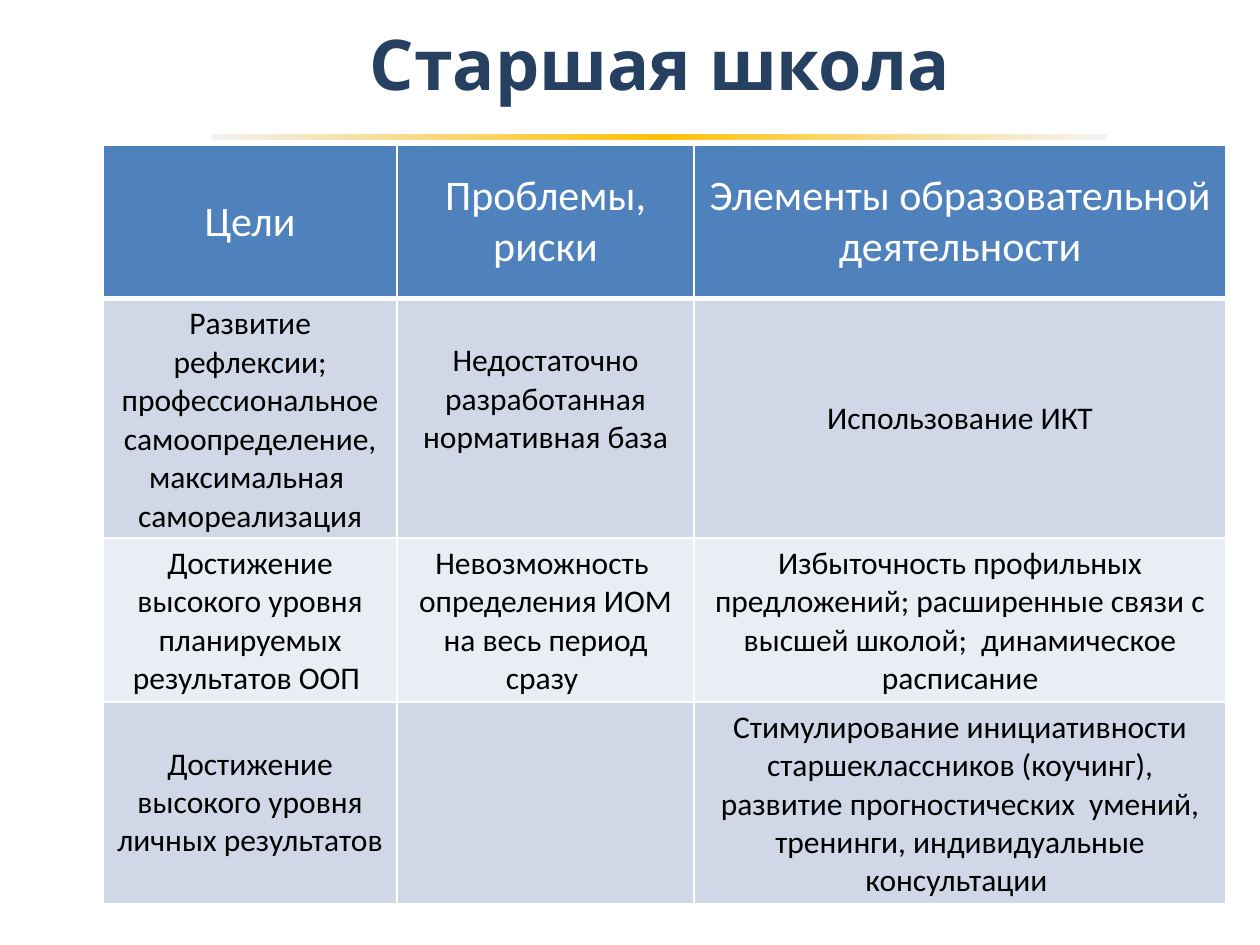
from lxml.etree import SubElement
from pptx import Presentation
from pptx.dml.color import RGBColor
from pptx.enum.shapes import MSO_SHAPE
from pptx.enum.text import MSO_ANCHOR, PP_ALIGN
from pptx.oxml.ns import qn
from pptx.util import Inches, Pt

COLORS = {
    "title": "254061",
    "header": "4F81BD",
    "odd_row": "D0D8E8",
    "even_row": "E9EDF4",
    "white": "FFFFFF",
    "black": "000000",
    "gold": "FFC000",
    "pale": "F2F2F2",
}

COLUMN_WIDTHS = [2.33, 2.36, 4.22]
ROW_HEIGHTS = [1.22, 1.78, 1.29, 1.5]
ROWS = [
    ["Цели", "Проблемы, риски", "Элементы образовательной деятельности"],
    [
        "Развитие рефлексии; профессиональное самоопределение, "
        "максимальная  самореализация",
        "Недостаточно разработанная нормативная база",
        "Использование ИКТ",
    ],
    [
        "Достижение высокого уровня планируемых результатов ООП ",
        "Невозможность  определения ИОМ на весь период сразу ",
        "Избыточность профильных предложений; расширенные связи с "
        "высшей школой;  динамическое расписание",
    ],
    [
        "Достижение высокого уровня личных результатов ",
        "",
        "Стимулирование инициативности старшеклассников (коучинг), развитие "
        "прогностических  умений, тренинги, индивидуальные консультации ",
    ],
]


def write_text(frame, text, size=18, font="Calibri", color="black", bold=False):
    para = frame.paragraphs[0]
    para.alignment = PP_ALIGN.CENTER
    if not text:
        return
    span = para.add_run()
    span.text = text
    span.font.size = Pt(size)
    span.font.name = font
    span.font.bold = bold
    span.font.color.rgb = RGBColor.from_string(COLORS[color])


def add_title(page, text):
    box = page.shapes.add_textbox(Inches(0.78), Inches(0.16), Inches(8.91), Inches(1.07))
    frame = box.text_frame
    frame.word_wrap = True
    frame.margin_top = 0
    write_text(frame, text, size=40, font="League Spartan", color="title", bold=True)


def add_cell_borders(cell, bottom_width):
    properties = cell._tc.get_or_add_tcPr()
    widths = {"a:lnL": 1, "a:lnR": 1, "a:lnT": 1, "a:lnB": bottom_width}
    for tag, width in widths.items():
        line = SubElement(properties, qn(tag), w=str(Pt(width)))
        fill = SubElement(line, qn("a:solidFill"))
        SubElement(fill, qn("a:srgbClr"), val=COLORS["white"])


def add_goals_table(page):
    table = page.shapes.add_table(
        len(ROWS), len(COLUMN_WIDTHS),
        Inches(0.82), Inches(1.15), Inches(8.91), Inches(6.1),
    ).table
    for column, width in zip(table.columns, COLUMN_WIDTHS):
        column.width = Inches(width)
    for index, (row, height, texts) in enumerate(zip(table.rows, ROW_HEIGHTS, ROWS)):
        row.height = Inches(height)
        is_header = index == 0
        fill = "header" if is_header else "odd_row" if index % 2 else "even_row"
        for cell, text in zip(row.cells, texts):
            add_cell_borders(cell, bottom_width=3 if is_header else 1)
            cell.fill.solid()
            cell.fill.fore_color.rgb = RGBColor.from_string(COLORS[fill])
            cell.vertical_anchor = MSO_ANCHOR.MIDDLE
            write_text(cell.text_frame, text, size=24 if is_header else 18,
                       color="white" if is_header else "black")
    # The first risk sits one text line higher than its neighbours
    table.cell(1, 1).margin_bottom = Inches(0.35)


def add_gradient_rule(page):
    rule = page.shapes.add_shape(
        MSO_SHAPE.RECTANGLE, Inches(1.69), Inches(1.07), Inches(7.09), Inches(0.04))
    rule.shadow.inherit = False
    rule.line.fill.background()
    rule.fill.gradient()
    rule.fill.gradient_angle = 0
    stops = rule.fill._fill._gradFill.find(qn("a:gsLst"))
    for stop in list(stops):
        stops.remove(stop)
    for position, color, opacity in [(0, "pale", 100), (50, "gold", 100), (100, "pale", 80)]:
        stop = SubElement(stops, qn("a:gs"), pos=str(position * 1000))
        tint = SubElement(stop, qn("a:srgbClr"), val=COLORS[color])
        if opacity < 100:
            SubElement(tint, qn("a:alpha"), val=str(opacity * 1000))


def main():
    deck = Presentation()
    deck.slide_width, deck.slide_height = Inches(10), Inches(7.5)
    page = deck.slides.add_slide(deck.slide_layouts[6])
    add_title(page, "Старшая школа")
    add_goals_table(page)
    add_gradient_rule(page)
    deck.save("out.pptx")


if __name__ == "__main__":
    main()
